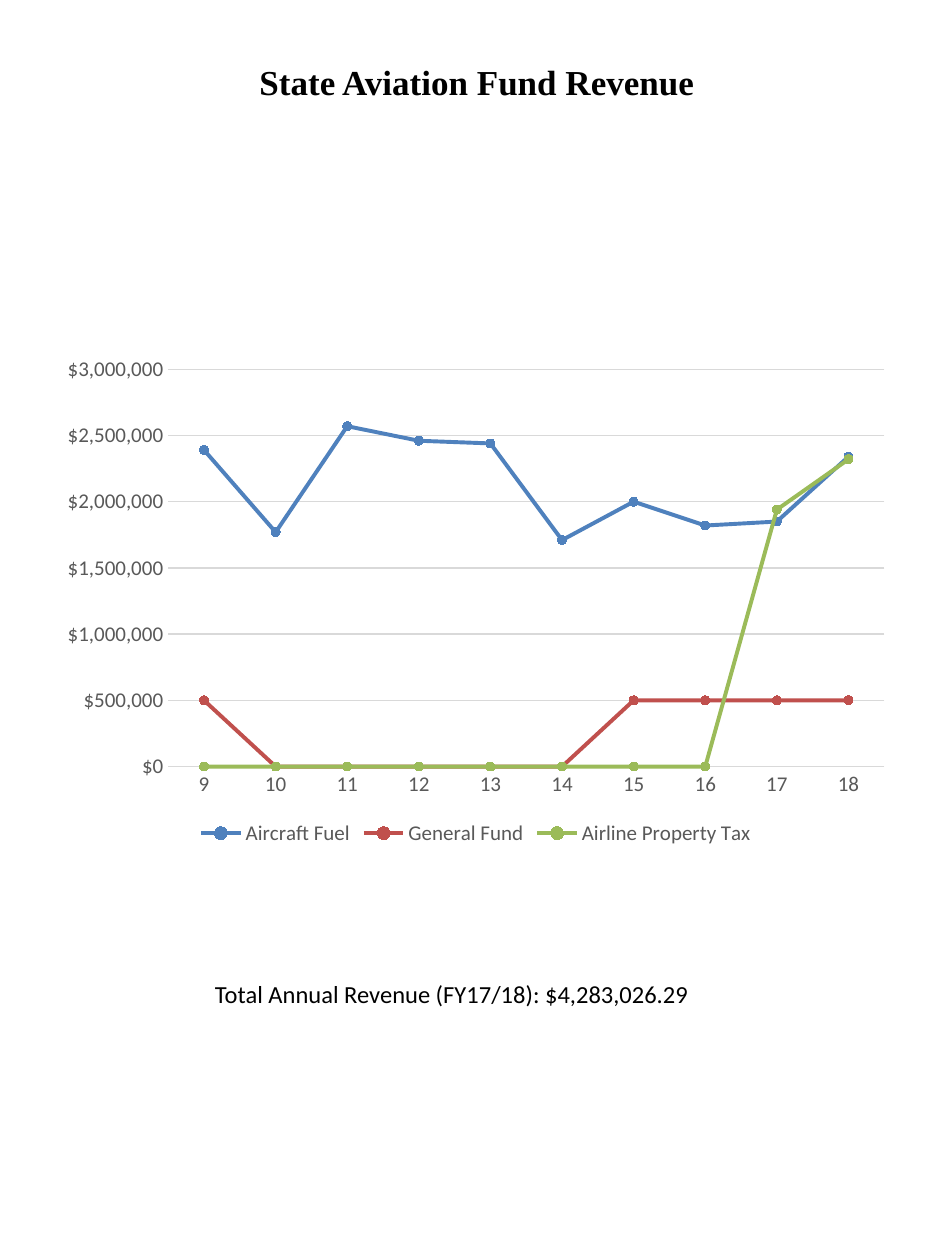
from pptx import Presentation
from pptx.chart.data import CategoryChartData
from pptx.dml.color import RGBColor
from pptx.enum.chart import XL_CHART_TYPE as ChartType, XL_LEGEND_POSITION as LegendPos
from pptx.enum.chart import XL_MARKER_STYLE as Marker, XL_TICK_MARK as Tick
from pptx.enum.text import MSO_ANCHOR as Anchor, PP_ALIGN as Align
from pptx.util import Cm, Pt

COLORS = {"text": "000000", "label": "595959", "grid": "D9D9D9",
          "Aircraft Fuel": "4F81BD", "General Fund": "C0504D",
          "Airline Property Tax": "9BBB59"}
YEARS = [str(year) for year in range(9, 19)]
REVENUE = {
    "Aircraft Fuel": [2390000, 1770000, 2570000, 2460000, 2440000,
                      1710000, 2000000, 1820000, 1850000, 2340000],
    "General Fund": [500000] + [0] * 5 + [500000] * 4,
    "Airline Property Tax": [0] * 8 + [1940000, 2320000],
}


def rgb(name):
    return RGBColor.from_string(COLORS[name])


def apply(obj, values):
    for name, value in values.items():
        setattr(obj, name, value)


class Slide:
    """Style and drawing methods for the current slide."""

    def __init__(self, prs):
        self.s = prs.slides.add_slide(prs.slide_layouts[6])
        self.label = {"name": "Calibri", "size": Pt(12), "bold": False}

    def font(self, font, values, color):
        apply(font, values)
        font.color.rgb = rgb(color)

    def line(self, line, color, width):
        line.color.rgb = rgb(color)
        line.width = Pt(width)

    def text(self, box, text, font, frame):
        tf = self.s.shapes.add_textbox(*map(Cm, box)).text_frame
        apply(tf, {"word_wrap": True, **frame})
        p = tf.paragraphs[0]
        p.alignment = Align.CENTER
        r = p.add_run()
        r.text = text
        self.font(r.font, font, "text")

    def line_chart(self, box, categories, series):
        data = CategoryChartData()
        data.categories = categories
        for name, values in series.items():
            data.add_series(name, values)
        chart = self.s.shapes.add_chart(
            ChartType.LINE_MARKERS, *map(Cm, box), data).chart
        apply(chart, {"has_title": False, "has_legend": True})
        self.font(chart.font, {"name": "Calibri", "size": Pt(10)}, "text")

        # Legend
        apply(chart.legend, {"position": LegendPos.BOTTOM, "include_in_layout": False})
        self.font(chart.legend.font, self.label, "label")

        # Axes
        cat, val = chart.category_axis, chart.value_axis
        for axis in (cat, val):
            apply(axis, {"major_tick_mark": Tick.NONE, "minor_tick_mark": Tick.NONE})
            self.font(axis.tick_labels.font, self.label, "label")
        self.line(cat.format.line, "grid", 0.75)
        val.format.line.fill.background()
        apply(val, {"has_major_gridlines": True, "minimum_scale": 0,
                    "maximum_scale": 3000000, "major_unit": 500000})
        self.line(val.major_gridlines.format.line, "grid", 0.75)
        apply(val.tick_labels, {"number_format": '"$"#,##0',
                                "number_format_is_linked": False})

        # Series
        plot = chart.plots[0]
        plot.vary_by_categories = False
        for ser in plot.series:
            ser.smooth = False
            self.line(ser.format.line, ser.name, 2.25)
            apply(ser.marker, {"style": Marker.CIRCLE, "size": 5})
            ser.marker.format.fill.solid()
            ser.marker.format.fill.fore_color.rgb = rgb(ser.name)
            self.line(ser.marker.format.line, ser.name, 0.75)


def main():
    prs = Presentation()
    apply(prs, {"slide_width": Cm(19.05), "slide_height": Cm(25.4)})
    slide = Slide(prs)

    # Title, raised within its box by the bottom margin
    slide.text((1.04, 0.03, 17.15, 4.06), "State Aviation Fund Revenue",
               {"name": "Times New Roman", "size": Pt(20), "bold": True},
               {"vertical_anchor": Anchor.MIDDLE, "margin_bottom": Cm(0.94)})

    # Revenue by fiscal year
    slide.line_chart((1.02, 6.99, 17.15, 10.16), YEARS, REVENUE)

    # Annual total
    slide.text((3.61, 19.61, 11, 0.86), "Total Annual Revenue (FY17/18): $4,283,026.29",
               {"name": "Calibri", "size": Pt(14)}, {"vertical_anchor": Anchor.TOP})
    prs.save("out.pptx")


if __name__ == "__main__":
    main()
